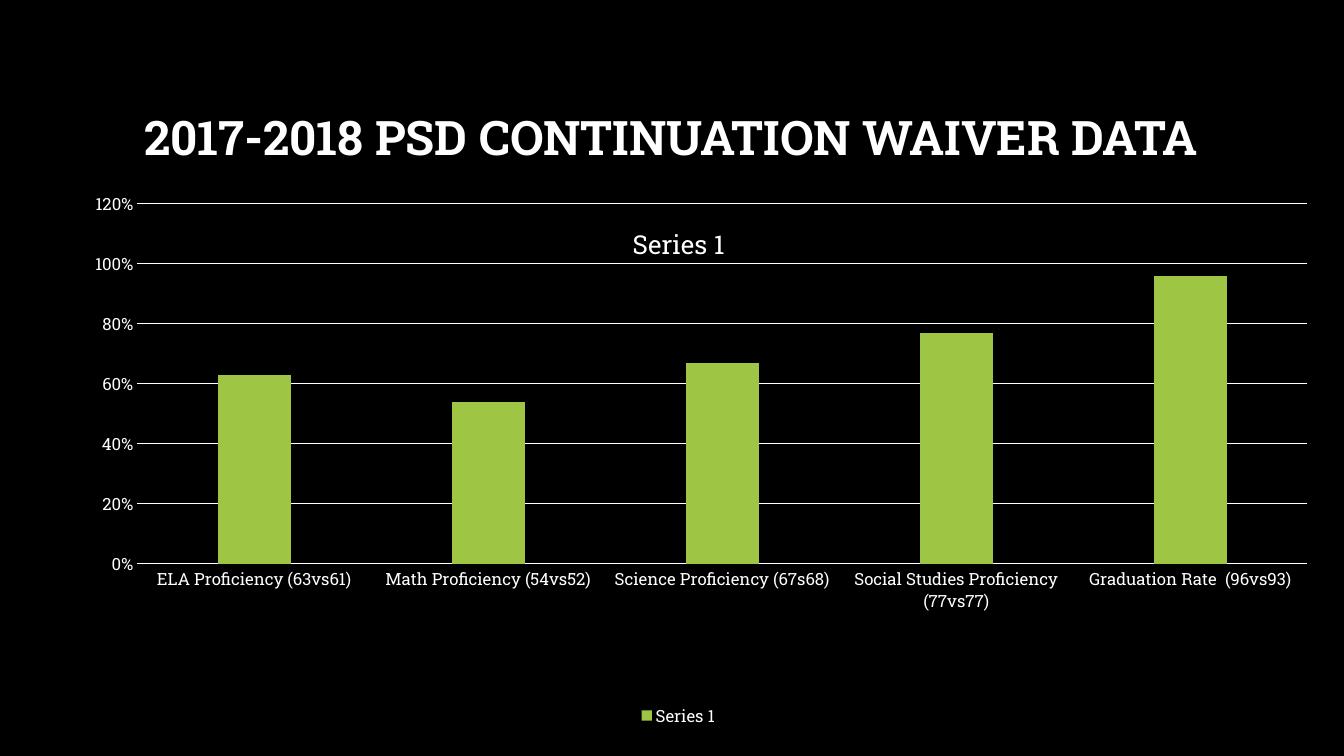
from dataclasses import dataclass

from pptx import Presentation
from pptx.chart.data import CategoryChartData
from pptx.dml.color import RGBColor
from pptx.enum.chart import XL_CHART_TYPE, XL_LEGEND_POSITION, XL_TICK_MARK
from pptx.enum.text import MSO_ANCHOR, PP_ALIGN
from pptx.oxml import parse_xml
from pptx.oxml.ns import nsdecls
from pptx.util import Cm, Pt

# Content
TITLE = "2017-2018 PSD CONTINUATION WAIVER DATA"
SERIES = "Series 1"
RESULTS = {
    "ELA Proficiency (63vs61)": 0.63,
    "Math Proficiency (54vs52)": 0.54,
    "Science Proficiency (67s68)": 0.67,
    "Social Studies Proficiency (77vs77)": 0.77,
    "Graduation Rate  (96vs93)": 0.96,
}


@dataclass(frozen=True)
class Theme:
    font: str = "Roboto Slab"
    background: RGBColor = RGBColor(0, 0, 0)
    text: RGBColor = RGBColor(255, 255, 255)
    bar: RGBColor = RGBColor(0x9E, 0xC5, 0x44)
    title: Pt = Pt(34)
    chart_title: Pt = Pt(18.6)
    label: Pt = Pt(12)
    line: Pt = Pt(0.75)


THEME = Theme()


def style_font(font, size, bold=False):
    font.name = THEME.font
    font.size = size
    font.bold = bold
    font.color.rgb = THEME.text


def style_line(line):
    line.color.rgb = THEME.text
    line.width = THEME.line


def set_layout(parent, position, **values):
    """Place a chart part by fractions of the chart's size."""
    for old in parent.xpath("c:layout"):
        parent.remove(old)
    fields = "".join(f'<c:{name} val="{value}"/>' for name, value in values.items())
    parent.insert(position, parse_xml(
        f'<c:layout {nsdecls("c")}><c:manualLayout>{fields}</c:manualLayout></c:layout>'))


# Slide
deck = Presentation()
deck.slide_width, deck.slide_height = Cm(33.87), Cm(19.05)
page = deck.slides.add_slide(deck.slide_layouts[5])
page.background.fill.solid()
page.background.fill.fore_color.rgb = THEME.background

# Title
heading = page.shapes.title
heading.left, heading.top, heading.width, heading.height = Cm(2.54), Cm(1.7), Cm(28.75), Cm(3.68)
heading.text_frame.text = TITLE
heading.text_frame.word_wrap = True
heading.text_frame.vertical_anchor = MSO_ANCHOR.MIDDLE
para = heading.text_frame.paragraphs[0]
para.alignment = PP_ALIGN.CENTER
para.line_spacing = 0.9
style_font(para.runs[0].font, THEME.title, bold=True)

# Column chart
data = CategoryChartData(number_format="0%")
data.categories = list(RESULTS)
data.add_series(SERIES, list(RESULTS.values()))
chart = page.shapes.add_chart(XL_CHART_TYPE.COLUMN_CLUSTERED,
                              Cm(1.24), Cm(4.85), Cm(31.72), Cm(13.56), data).chart
style_font(chart.font, THEME.label)
plot = chart.plots[0]
plot.vary_by_categories = False
plot.gap_width = 219
plot.overlap = -27
bars = plot.series[0].format.fill
bars.solid()
bars.fore_color.rgb = THEME.bar

# Axes
for axis in (chart.category_axis, chart.value_axis):
    axis.major_tick_mark = axis.minor_tick_mark = XL_TICK_MARK.NONE
    style_font(axis.tick_labels.font, THEME.label)
style_line(chart.category_axis.format.line)
scale = chart.value_axis
scale.minimum_scale, scale.maximum_scale, scale.major_unit = 0, 1.2, 0.2
scale.tick_labels.number_format = "0%"
scale.tick_labels.number_format_is_linked = False
scale.format.line.fill.background()
style_line(scale.major_gridlines.format.line)

# Legend
chart.has_legend = True
chart.legend.position = XL_LEGEND_POSITION.BOTTOM
chart.legend.include_in_layout = False
style_font(chart.legend.font, THEME.label)

# Chart title, laid over the plot
chart.has_title = True
chart.chart_title.text_frame.text = SERIES
style_font(chart.chart_title.text_frame.paragraphs[0].runs[0].font, THEME.chart_title)
title_part = chart.element.xpath("c:chart/c:title")[0]
set_layout(title_part, 1, xMode="edge", yMode="edge", x=0.46, y=0.05)
for overlay in title_part.xpath("c:overlay"):
    overlay.set("val", "1")

# Plot area
set_layout(chart.element.xpath("c:chart/c:plotArea")[0], 0, layoutTarget="inner",
           xMode="edge", yMode="edge", x=0.07, y=0.02, w=0.93, h=0.67)

deck.save("out.pptx")
